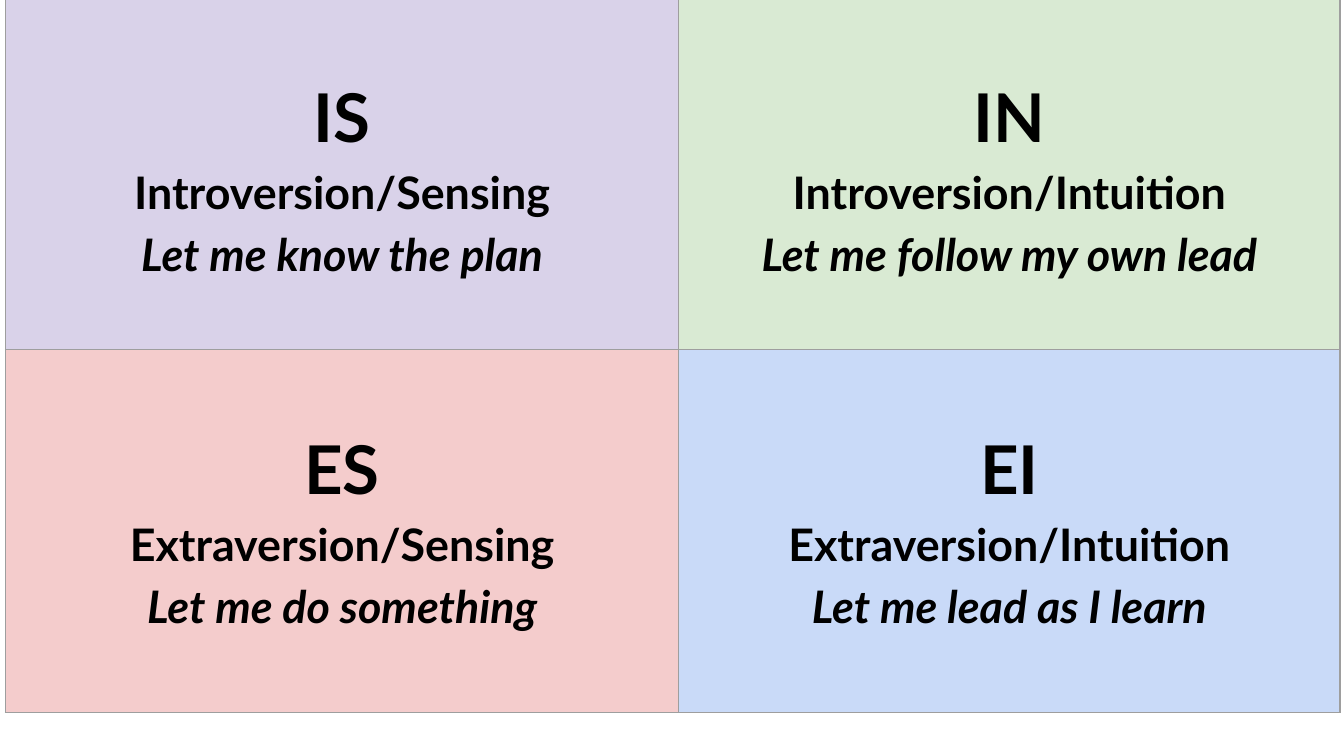
from pptx import Presentation
from pptx.dml.color import RGBColor
from pptx.enum.text import MSO_ANCHOR, PP_ALIGN
from pptx.oxml import parse_xml
from pptx.oxml.ns import nsdecls
from pptx.util import Inches, Pt


def color(value):
    return RGBColor.from_string(value)


class SlideBuilder:
    font = "Lato"
    text_color = "000000"
    border_color = "9E9E9E"
    border_width = Pt(0.75)
    line_spacing = 1.15
    side_margin = Inches(0.1)
    top_margin = Inches(0.5)

    def __init__(self, slide):
        self.slide = slide

    def table(self, left, top, widths, heights, rows):
        frame = self.slide.shapes.add_table(
            len(heights), len(widths), Inches(left), Inches(top),
            Inches(sum(widths)), Inches(sum(heights)))
        table = frame.table
        table.first_row = table.horz_banding = False
        for column, width in zip(table.columns, widths):
            column.width = Inches(width)
        for row, height, contents in zip(table.rows, heights, rows):
            row.height = Inches(height)
            for cell, (fill, *lines) in zip(row.cells, contents):
                self.cell(cell, fill, lines)

    def cell(self, cell, fill, lines):
        cell.margin_left = cell.margin_right = cell.margin_bottom = self.side_margin
        cell.margin_top = self.top_margin
        cell.vertical_anchor = MSO_ANCHOR.TOP
        self.borders(cell)
        cell.fill.solid()
        cell.fill.fore_color.rgb = color(fill)
        cell.text_frame.text = "\n".join(lines)
        styles = [(36, False), (24, False), (24, True)]
        for paragraph, (size, italic) in zip(cell.text_frame.paragraphs, styles):
            paragraph.alignment = PP_ALIGN.CENTER
            paragraph.line_spacing = self.line_spacing
            font = paragraph.font
            font.name, font.size = self.font, Pt(size)
            font.bold, font.italic = True, italic
            font.color.rgb = color(self.text_color)

    def borders(self, cell):
        properties = cell._tc.get_or_add_tcPr()
        for side in ("lnL", "lnR", "lnT", "lnB"):
            properties.append(parse_xml(
                f'<a:{side} {nsdecls("a")} w="{self.border_width}"><a:solidFill>'
                f'<a:srgbClr val="{self.border_color}"/></a:solidFill></a:{side}>'))


# Widescreen slide, 16 by 9
presentation = Presentation()
presentation.slide_width = Inches(10)
presentation.slide_height = Inches(10 * 9 / 16)
builder = SlideBuilder(presentation.slides.add_slide(presentation.slide_layouts[6]))

# Personality quadrants: fill, code, name, motto
quadrants = [
    [("D9D2E9", "IS", "Introversion/Sensing", "Let me know the plan"),
     ("D9EAD3", "IN", "Introversion/Intuition", "Let me follow my own lead")],
    [("F4CCCC", "ES", "Extraversion/Sensing", "Let me do something"),
     ("C9DAF8", "EI", "Extraversion/Intuition", "Let me lead as I learn")],
]
builder.table(0.04, -0.02, [5.01, 4.92], [2.62, 2.7], quadrants)

presentation.save("out.pptx")
